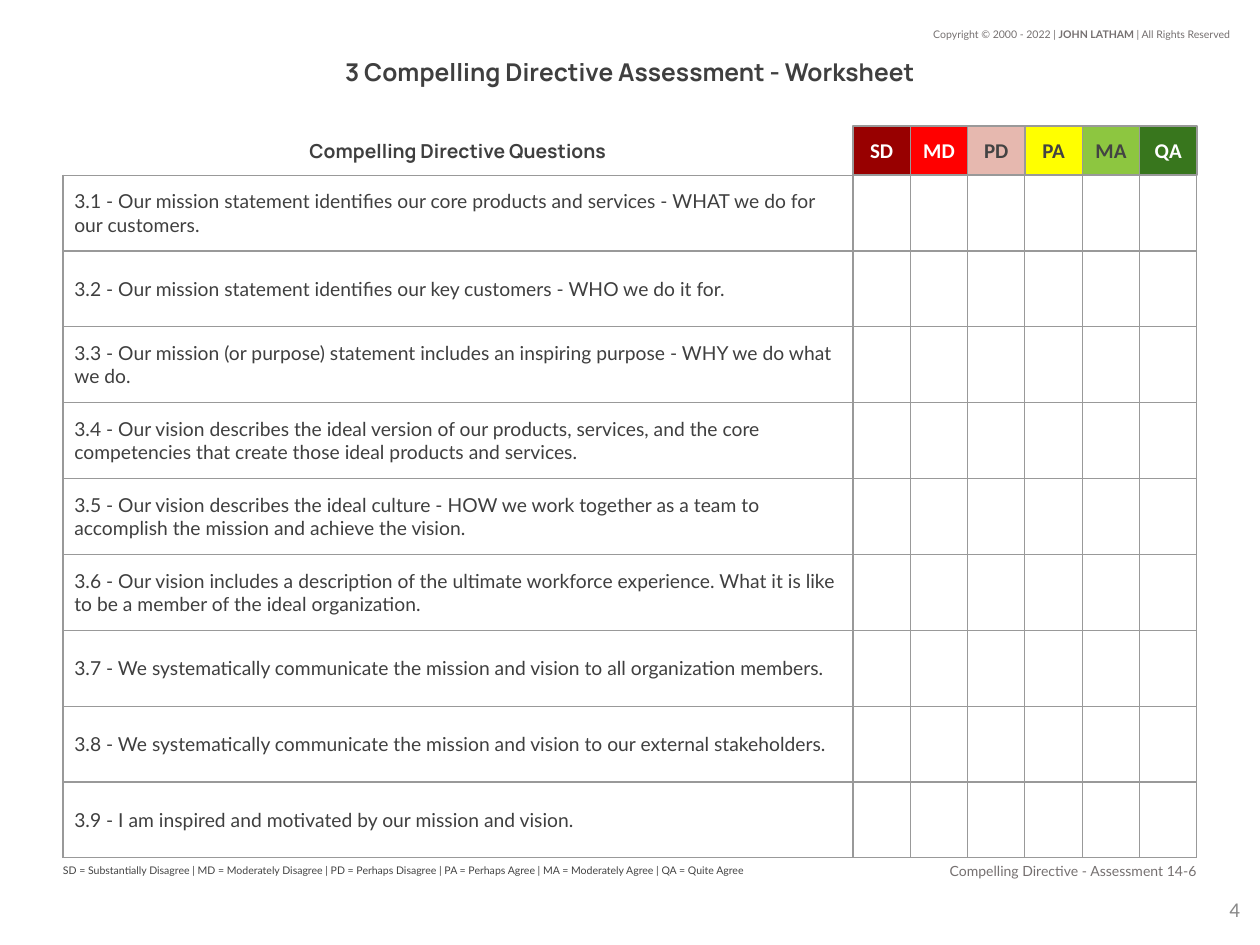
from lxml.etree import SubElement
from pptx import Presentation
from pptx.dml.color import RGBColor
from pptx.enum.shapes import MSO_SHAPE
from pptx.enum.text import MSO_ANCHOR, PP_ALIGN
from pptx.oxml import parse_xml
from pptx.oxml.ns import nsdecls, qn
from pptx.util import Emu, Pt

PX = 9144  # 100 px to the inch
DARK, GREY, BORDER = "3F3F3F", "757070", "999999"
LEFT, RIGHT, QUESTION_WIDTH = 50, 950, 627
RATINGS = [
    ("SD", "980000", "FFFFFF"),
    ("MD", "FF0000", "FFFFFF"),
    ("PD", "E6B8AF", "434343"),
    ("PA", "FFFF00", "434343"),
    ("MA", "8DC640", "434343"),
    ("QA", "38761D", "FFFFFF"),
]
QUESTIONS = [
    "3.1 - Our mission statement identifies our core products and services - WHAT we do for our customers.",
    "3.2 - Our mission statement identifies our key customers - WHO we do it for.",
    "3.3 - Our mission (or purpose) statement includes an inspiring purpose - WHY we do what we do.",
    "3.4 - Our vision describes the ideal version of our products, services, and the core "
    "competencies that create those ideal products and services.",
    "3.5 - Our vision describes the ideal culture - HOW we work together as a team to "
    "accomplish the mission and achieve the vision.",
    "3.6 - Our vision includes a description of the ultimate workforce experience. "
    "What it is like to be a member of the ideal organization.",
    "3.7 - We systematically communicate the mission and vision to all organization members.",
    "3.8 - We systematically communicate the mission and vision to our external stakeholders.",
    "3.9 - I am inspired and motivated by our mission and vision.",
]


def px(length):
    return Emu(round(length * PX))


def color(value):
    return RGBColor.from_string(value)


def style_span(span, size, font, ink, bold=False):
    span.font.size = Pt(size)
    span.font.name = font
    span.font.bold = bold
    span.font.color.rgb = color(ink)


def fill_frame(frame, text, size, font, ink, bold=False, align=PP_ALIGN.LEFT,
               insets=(10, 10, 10, 10), anchor=MSO_ANCHOR.MIDDLE):
    frame.word_wrap = True
    frame.vertical_anchor = anchor
    (frame.margin_left, frame.margin_top,
     frame.margin_right, frame.margin_bottom) = map(px, insets)
    frame.text = text
    para = frame.paragraphs[0]
    para.alignment = align
    style_span(para.runs[0], size, font, ink, bold)
    return para


def add_text(slide, box, *text, **options):
    label = slide.shapes.add_textbox(*map(px, box))
    return fill_frame(label.text_frame, *text, **options)


def add_copyright(slide, box):
    para = add_text(slide, box, "Copyright © 2000 - 2022 | ", 6, "Lato", GREY,
                    align=PP_ALIGN.RIGHT, insets=(10, 5, 10, 5), anchor=MSO_ANCHOR.TOP)
    for text, bold in (("JOHN LATHAM ", True), ("| All Rights Reserved", False)):
        span = para.add_run()
        span.text = text
        style_span(span, 6, "Lato", GREY, bold)


def add_rating_header(slide, box):
    left, top, width, height = box
    step = width / len(RATINGS)
    for index, (name, fill, ink) in enumerate(RATINGS):
        tile = slide.shapes.add_shape(MSO_SHAPE.RECTANGLE, px(left + index * step),
                                      px(top), px(step), px(height))
        tile.shadow.inherit = False
        tile.fill.solid()
        tile.fill.fore_color.rgb = color(fill)
        tile.line.color.rgb = color(BORDER)
        tile.line.width = Pt(0.75)
        fill_frame(tile.text_frame, name, 12, "Calibri", ink, bold=True,
                   align=PP_ALIGN.CENTER)


def set_borders(cell):
    properties = cell._tc.get_or_add_tcPr()
    for index, side in enumerate(("lnL", "lnR", "lnT", "lnB")):
        border = parse_xml(f'<a:{side} {nsdecls("a")} w="{Pt(0.75)}"/>')
        fill = SubElement(border, qn("a:solidFill"))
        SubElement(fill, qn("a:srgbClr"), val=BORDER)
        properties.insert(index, border)


def add_question_table(slide, box):
    left, top, width, height = box
    frame = slide.shapes.add_table(len(QUESTIONS), len(RATINGS) + 1, *map(px, box))
    table = frame.table
    table.first_row = table.horz_banding = False
    rating_width = (width - QUESTION_WIDTH) / len(RATINGS)
    for index, column in enumerate(table.columns):
        column.width = px(rating_width if index else QUESTION_WIDTH)
    for row, question in zip(table.rows, QUESTIONS):
        row.height = px(height / len(QUESTIONS))
        for cell in row.cells:
            cell.fill.background()
            set_borders(cell)
        cell = row.cells[0]
        cell.vertical_anchor = MSO_ANCHOR.MIDDLE
        cell.margin_left = cell.margin_right = px(9)
        cell.margin_top = cell.margin_bottom = px(9)
        cell.text_frame.text = question
        style_span(cell.text_frame.paragraphs[0].runs[0], 11, "Lato", DARK)


def add_footer(slide, box):
    left, top, width, height = box
    add_text(slide, (left, top, QUESTION_WIDTH, height),
             "SD = Substantially Disagree | MD = Moderately Disagree | PD = Perhaps Disagree | "
             "PA = Perhaps Agree | MA = Moderately Agree | QA = Quite Agree",
             6, "Lato", "434343", insets=(0, 10, 10, 10))
    add_text(slide, (left + width - 312, top + 4, 312, 20),
             "Compelling Directive - Assessment 14-6", 8, "Lato", GREY,
             align=PP_ALIGN.RIGHT, insets=(10, 10, 0, 10))


def build_worksheet(slide):
    width = RIGHT - LEFT
    ratings_left = LEFT + QUESTION_WIDTH
    add_copyright(slide, (728, 17, 258, 20))
    add_text(slide, (LEFT, 42, width, 30), "3 Compelling Directive Assessment - Worksheet",
             14, "Manrope", DARK, bold=True, align=PP_ALIGN.CENTER)
    add_text(slide, (LEFT, 100, QUESTION_WIDTH, 39), "Compelling Directive Questions",
             11, "Manrope", DARK, bold=True, align=PP_ALIGN.CENTER)
    add_question_table(slide, (LEFT, 139, width, 542))
    add_rating_header(slide, (ratings_left, 100, RIGHT - ratings_left, 39))
    add_footer(slide, (LEFT, 677, width, 28))
    add_text(slide, (934, 693, 60, 57), "4", 12, "Calibri", "888888", align=PP_ALIGN.RIGHT)


def main():
    deck = Presentation()
    deck.slide_width, deck.slide_height = px(1000), px(750)
    build_worksheet(deck.slides.add_slide(deck.slide_layouts[6]))
    deck.save("out.pptx")


if __name__ == "__main__":
    main()
